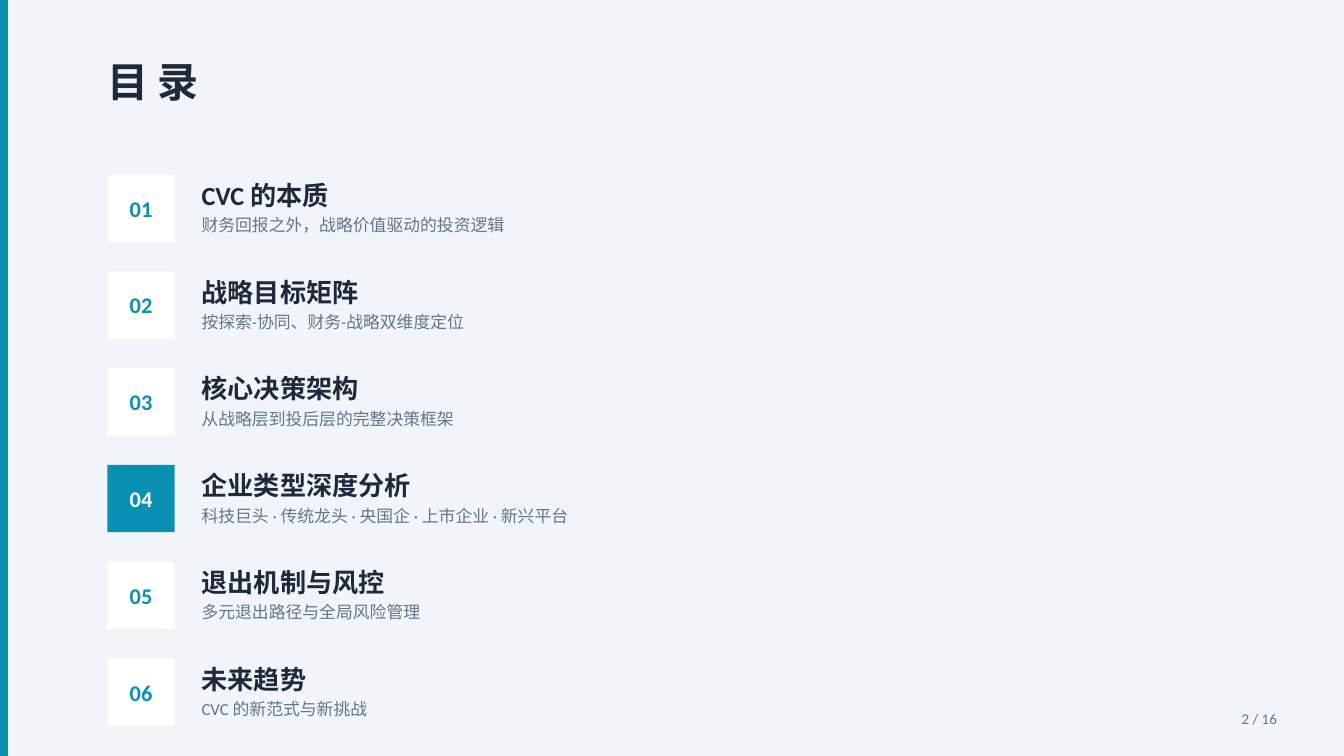
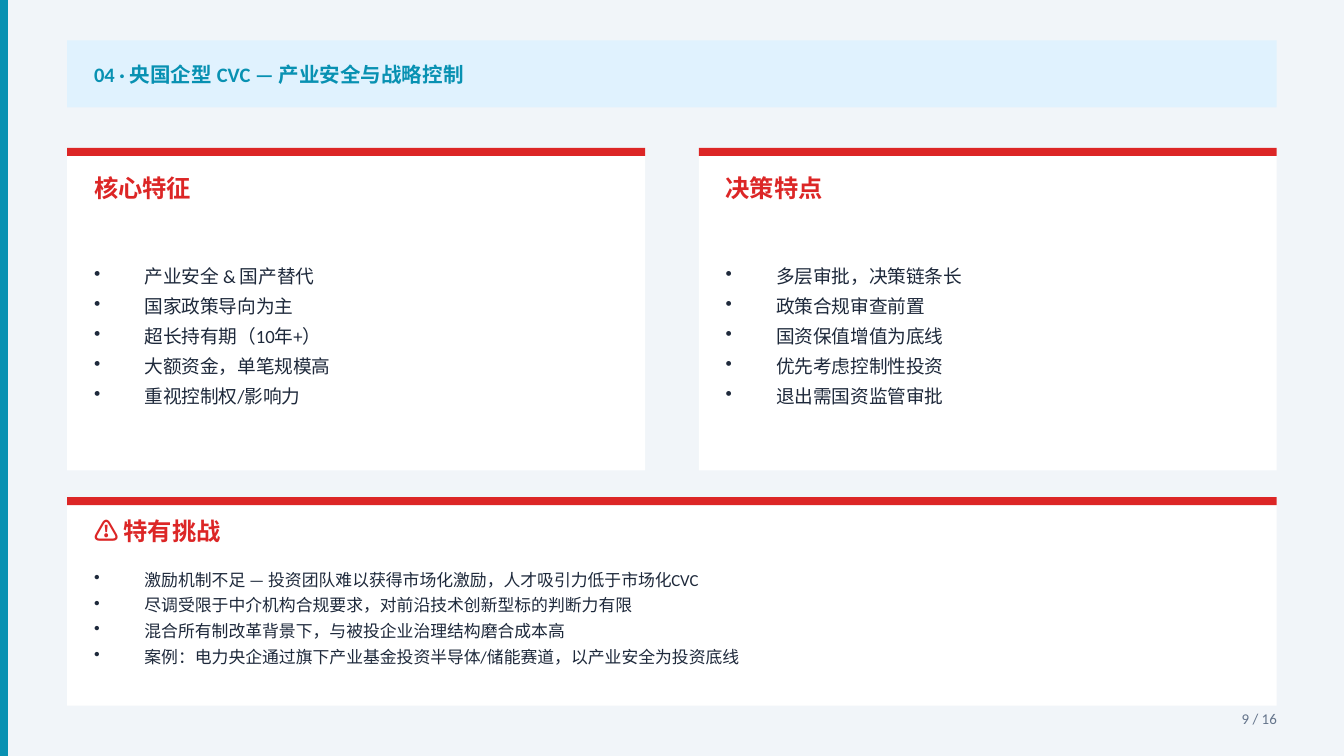
from lxml.etree import SubElement
from pptx import Presentation
from pptx.dml.color import RGBColor
from pptx.enum.shapes import MSO_SHAPE
from pptx.enum.text import MSO_ANCHOR, PP_ALIGN
from pptx.oxml.ns import qn
from pptx.util import Pt

PX = 4572
WIDTH, HEIGHT = 2000, 1125
FONT = "Calibri"
TEAL = RGBColor(0x08, 0x91, 0xB2)
INK = RGBColor(0x1E, 0x29, 0x3B)
SLATE = RGBColor(0x64, 0x74, 0x8B)
RED = RGBColor(0xDC, 0x26, 0x26)
WHITE = RGBColor(0xFF, 0xFF, 0xFF)
PALE = RGBColor(0xF1, 0xF5, 0xF9)
SKY = RGBColor(0xE0, 0xF2, 0xFE)

PAGE_TOTAL = 16
EDGE = 12
MARGIN = 100
PADDING = 40
BULLET_INDENT = 75

CONTENTS_TITLE = "目 录"
CURRENT_CHAPTER = 4
CHAPTERS = [
    ("CVC 的本质", "财务回报之外，战略价值驱动的投资逻辑"),
    ("战略目标矩阵", "按探索-协同、财务-战略双维度定位"),
    ("核心决策架构", "从战略层到投后层的完整决策框架"),
    ("企业类型深度分析", "科技巨头 · 传统龙头 · 央国企 · 上市企业 · 新兴平台"),
    ("退出机制与风控", "多元退出路径与全局风险管理"),
    ("未来趋势", "CVC 的新范式与新挑战"),
]

SECTION_TITLE = "04 · 央国企型 CVC — 产业安全与战略控制"
COLUMNS = [
    ("核心特征", [
        "产业安全 & 国产替代",
        "国家政策导向为主",
        "超长持有期（10年+）",
        "大额资金，单笔规模高",
        "重视控制权/影响力",
    ]),
    ("决策特点", [
        "多层审批，决策链条长",
        "政策合规审查前置",
        "国资保值增值为底线",
        "优先考虑控制性投资",
        "退出需国资监管审批",
    ]),
]
CHALLENGES = ("⚠️ 特有挑战", [
    "激励机制不足 — 投资团队难以获得市场化激励，人才吸引力低于市场化CVC",
    "尽调受限于中介机构合规要求，对前沿技术创新型标的判断力有限",
    "混合所有制改革背景下，与被投企业治理结构磨合成本高",
    "案例：电力央企通过旗下产业基金投资半导体/储能赛道，以产业安全为投资底线",
])


def scaled(*lengths):
    return [length * PX for length in lengths]


def add_bar(page, left, top, width, height, color):
    bar = page.shapes.add_shape(MSO_SHAPE.RECTANGLE, *scaled(left, top, width, height))
    bar.shadow.inherit = False
    bar.fill.solid()
    bar.fill.fore_color.rgb = color
    bar.line.fill.background()


def add_bullet(para):
    properties = para._p.get_or_add_pPr()
    properties.set("marL", str(BULLET_INDENT * PX))
    properties.set("indent", str(-BULLET_INDENT * PX))
    SubElement(properties, qn("a:buSzPct")).set("val", "100000")
    SubElement(properties, qn("a:buChar")).set("char", "•")


def add_text(page, area, lines, size, color, bold=False, align=PP_ALIGN.LEFT,
             inset=False, bullet_gap=None):
    box = page.shapes.add_textbox(*scaled(*area))
    frame = box.text_frame
    frame.word_wrap = True
    frame.vertical_anchor = MSO_ANCHOR.MIDDLE
    if not inset:
        frame.margin_left = frame.margin_right = 0
        frame.margin_top = frame.margin_bottom = 0
    frame.text = "\n".join(lines)
    for para in frame.paragraphs:
        para.alignment = align
        if bullet_gap is not None:
            add_bullet(para)
            para.space_after = Pt(bullet_gap)
        for span in para.runs:
            span.font.size = Pt(size)
            span.font.bold = bold
            span.font.color.rgb = color
            span.font.name = FONT
            SubElement(span._r.get_or_add_rPr(), qn("a:ea")).set("typeface", FONT)


def add_page(deck):
    page = deck.slides.add_slide(deck.slide_layouts[6])
    page.background.fill.solid()
    page.background.fill.fore_color.rgb = PALE
    add_bar(page, 0, 0, EDGE, HEIGHT, TEAL)
    return page


def add_page_number(page, number):
    add_text(page, (1760, 1040, 160, 60), [f"{number} / {PAGE_TOTAL}"], 8, SLATE,
             align=PP_ALIGN.RIGHT, inset=True)


def add_chapter(page, number, title, summary):
    left, size, pitch = 160, 100, 144
    top = 260 + (number - 1) * pitch
    tile, ink = (TEAL, WHITE) if number == CURRENT_CHAPTER else (WHITE, TEAL)
    add_bar(page, left, top, size, size, tile)
    add_text(page, (left, top, size, size), [f"{number:02}"], 12, ink,
             bold=True, align=PP_ALIGN.CENTER, inset=True)
    text_left = left + size + PADDING
    add_text(page, (text_left, top, 800, 60), [title], 14, INK, bold=True)
    add_text(page, (text_left, top + 50, 1200, 50), [summary], 9, SLATE)


def add_card(page, area, card, heading_drop, list_drop, list_size, size, gap):
    left, top, width, height = area
    heading, points = card
    text_left = left + PADDING
    add_bar(page, *area, WHITE)
    add_bar(page, left, top, width, EDGE, RED)
    add_text(page, (text_left, top + heading_drop, 600, 60), [heading], 13, RED, bold=True)
    add_text(page, (text_left, top + list_drop, *list_size), points, size, INK,
             bullet_gap=gap)


def build_contents(deck):
    page = add_page(deck)
    add_text(page, (160, 60, 600, 120), [CONTENTS_TITLE], 22, INK, bold=True)
    for number, (title, summary) in enumerate(CHAPTERS, 1):
        add_chapter(page, number, title, summary)
    add_page_number(page, 2)


def build_state_owned(deck):
    page = add_page(deck)
    full = WIDTH - 2 * MARGIN
    gutter = 80
    column = (full - gutter) // 2
    add_bar(page, MARGIN, 60, full, 100, SKY)
    add_text(page, (MARGIN + PADDING, 60, 1700, 100), [SECTION_TITLE], 11, TEAL, bold=True)
    for index, card in enumerate(COLUMNS):
        left = MARGIN + index * (column + gutter)
        add_card(page, (left, 220, column, 480), card, 30, 110, (760, 340), 10, 4)
    add_card(page, (MARGIN, 740, full, 310), CHALLENGES, 20, 80, (1700, 200), 9, 3)
    add_page_number(page, 9)


def main():
    deck = Presentation()
    deck.slide_width, deck.slide_height = scaled(WIDTH, HEIGHT)
    build_contents(deck)
    build_state_owned(deck)
    deck.save("out.pptx")


if __name__ == "__main__":
    main()
